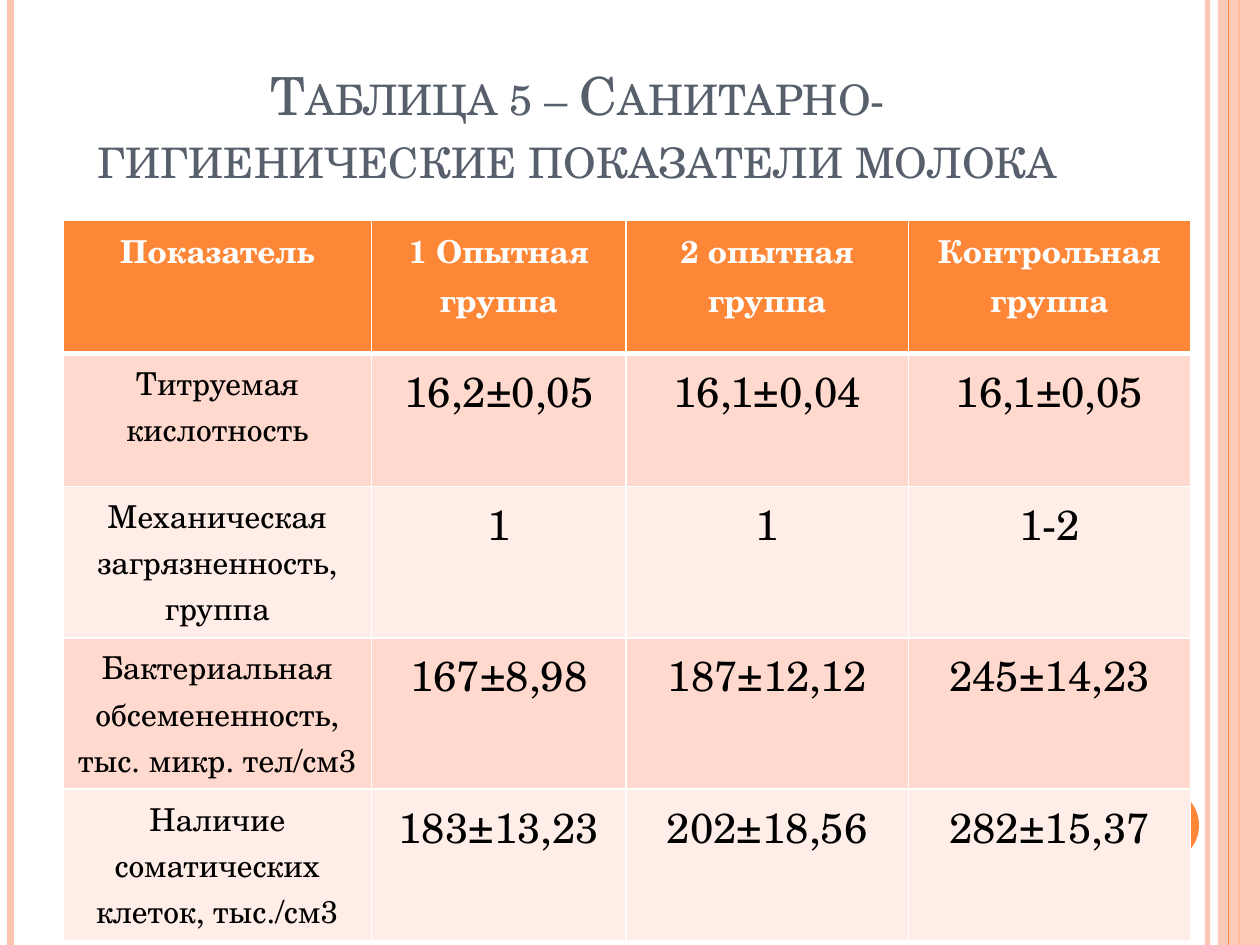
from typing import NamedTuple

from lxml.etree import SubElement
from pptx import Presentation
from pptx.dml.color import RGBColor
from pptx.enum.shapes import MSO_CONNECTOR as CONN, MSO_SHAPE as SHAPE
from pptx.enum.text import MSO_ANCHOR as ANCHOR, PP_ALIGN as ALIGN
from pptx.oxml import parse_xml
from pptx.oxml.ns import nsdecls, qn
from pptx.util import Pt

FONT = "TeX Gyre Schola"
ORANGE, PEACH, WHITE, BLACK, SLATE = "FE8637", "FEC3AE", "FFFFFF", "000000", "575F6D"
BANDS = ("FFD9CE", "FFEDE8")
SLIDE_W, SLIDE_H = 720, 540
COL_WIDTHS = (176.4, 145.4, 161.3, 161.3)
ROW_H = 76

ROWS = (
    ("Показатель", "1 Опытная группа", "2 опытная группа", "Контрольная группа"),
    ("Титруемая кислотность", "16,2±0,05", "16,1±0,04", "16,1±0,05"),
    ("Механическая загрязненность, группа", "1", "1", "1-2"),
    ("Бактериальная обсемененность, тыс. микр. тел/см3",
     "167±8,98", "187±12,12", "245±14,23"),
    ("Наличие соматических клеток, тыс./см3",
     "183±13,23", "202±18,56", "282±15,37"),
)


class Stripe(NamedTuple):
    x: float
    width: float
    color: str
    opacity: int = 100


class Block(NamedTuple):
    shape: SHAPE
    x: float
    y: float
    w: float
    h: float
    color: str
    opacity: int = 100


DECOR = (
    Stripe(690, 3, PEACH, 93),
    Stripe(6, 4.5, PEACH),
    Stripe(708, 1.5, ORANGE),
    Block(SHAPE.RECTANGLE, 696, 0, 24, SLIDE_H, PEACH, 87),
    Stripe(702, 0.75, ORANGE),
    Block(SHAPE.OVAL, 642, 450, 43.2, 43.2, ORANGE),
)


def rgb(color: str) -> RGBColor:
    return RGBColor.from_string(color)


def set_opacity(sp, opacity: int) -> None:
    if opacity < 100:
        clr = next(sp._element.spPr.iter(qn("a:srgbClr")))
        SubElement(clr, qn("a:alpha")).set("val", str(opacity * 1000))


def draw_stripe(s, stripe: Stripe) -> None:
    x = Pt(stripe.x)
    line = s.shapes.add_connector(CONN.STRAIGHT, x, 0, x, Pt(SLIDE_H))
    line.line.width = Pt(stripe.width)
    line.line.color.rgb = rgb(stripe.color)
    set_opacity(line, stripe.opacity)
    SubElement(line._element.spPr, qn("a:effectLst"))


def draw_block(s, block: Block) -> None:
    sp = s.shapes.add_shape(block.shape, Pt(block.x), Pt(block.y), Pt(block.w), Pt(block.h))
    sp.shadow.inherit = False
    sp.fill.solid()
    sp.fill.fore_color.rgb = rgb(block.color)
    sp.line.fill.background()
    set_opacity(sp, block.opacity)


def format_text(p, size: float, color: str, bold: bool = False) -> None:
    p.alignment = ALIGN.CENTER
    p.font.name = FONT
    p.font.size = Pt(size)
    p.font.bold = bold
    p.font.color.rgb = rgb(color)


def set_borders(cell, bottom: float) -> None:
    tc_pr = cell._tc.get_or_add_tcPr()
    widths = {"lnL": 1, "lnR": 1, "lnT": 1, "lnB": bottom}
    for i, (side, width) in enumerate(widths.items()):
        tc_pr.insert(i, parse_xml(
            f'<a:{side} {nsdecls("a")} w="{Pt(width)}"><a:solidFill>'
            f'<a:srgbClr val="{WHITE}"/></a:solidFill></a:{side}>'))


def fill_cell(cell, text: str, row: int, col: int) -> None:
    header = row == 0
    cell.text = text
    cell.fill.solid()
    cell.fill.fore_color.rgb = rgb(ORANGE if header else BANDS[(row - 1) % 2])
    format_text(cell.text_frame.paragraphs[0], 18 if header or col == 0 else 24,
                WHITE if header else BLACK, header)
    set_borders(cell, 3 if header else 1)


def add_title(s, text: str) -> None:
    title = s.shapes.title
    title.left, title.top, title.width, title.height = Pt(36), Pt(21.6), Pt(588), Pt(111.6 - 21.6)
    tf = title.text_frame
    tf.text = text
    tf.word_wrap = True
    tf.vertical_anchor = ANCHOR.BOTTOM
    p = tf.paragraphs[0]
    format_text(p, 30, SLATE)
    p._p.pPr.find(qn("a:defRPr")).set("cap", "small")
    # Bring the title in front of the decoration
    s.shapes._spTree.append(title._element)


def add_milk_table(s) -> None:
    table = s.shapes.add_table(len(ROWS), len(COL_WIDTHS), Pt(36), Pt(126),
                               Pt(sum(COL_WIDTHS)), Pt(ROW_H * len(ROWS))).table
    for column, width in zip(table.columns, COL_WIDTHS):
        column.width = Pt(width)
    for i, values in enumerate(ROWS):
        for j, text in enumerate(values):
            fill_cell(table.cell(i, j), text, i, j)


def main() -> None:
    prs = Presentation()
    prs.slide_width, prs.slide_height = Pt(SLIDE_W), Pt(SLIDE_H)
    s = prs.slides.add_slide(prs.slide_layouts[5])

    # Side stripes and circle
    for part in DECOR:
        if isinstance(part, Stripe):
            draw_stripe(s, part)
        else:
            draw_block(s, part)

    # Title and table
    add_title(s, "Таблица 5 – Санитарно-гигиенические показатели молока")
    add_milk_table(s)
    prs.save("out.pptx")


if __name__ == "__main__":
    main()
